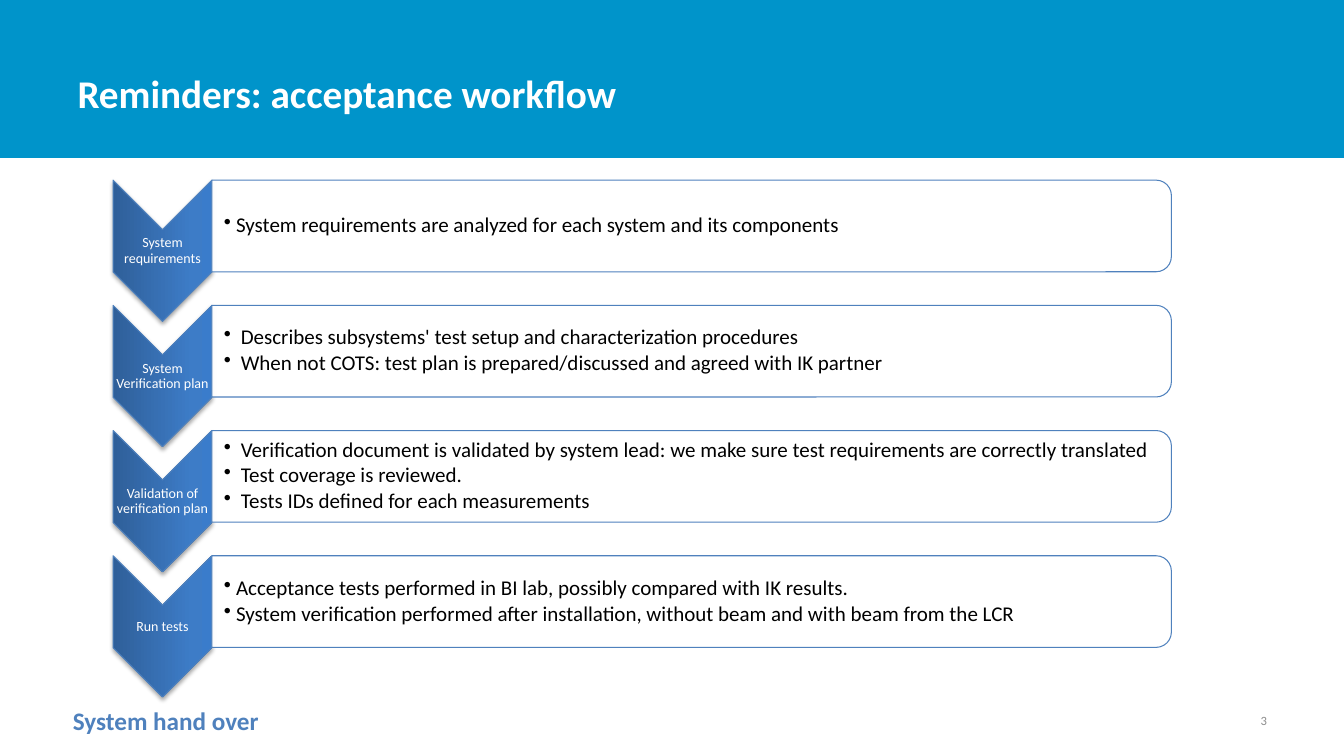
from lxml import etree
from pptx import Presentation
from pptx.dml.color import RGBColor
from pptx.enum.shapes import MSO_SHAPE as SHAPE
from pptx.enum.text import MSO_ANCHOR as ANCHOR, PP_ALIGN as ALIGN
from pptx.oxml import parse_xml
from pptx.oxml.ns import qn
from pptx.util import Cm, Pt

NS = 'xmlns:a="http://schemas.openxmlformats.org/drawingml/2006/main"'
BLUE = "4F81BD"
GRADIENT = f'''<a:gradFill {NS} rotWithShape="1"><a:gsLst>
<a:gs pos="0"><a:srgbClr val="2F5F99"/></a:gs>
<a:gs pos="80000"><a:srgbClr val="3D7CC7"/></a:gs>
<a:gs pos="100000"><a:srgbClr val="3A7CCB"/></a:gs>
</a:gsLst><a:lin ang="16200000" scaled="0"/></a:gradFill>'''
SHADOW = f'''<a:effectLst {NS}>
<a:outerShdw blurRad="40000" dist="23000" dir="5400000" rotWithShape="0">
<a:srgbClr val="000000"><a:alpha val="35000"/></a:srgbClr>
</a:outerShdw></a:effectLst>'''


def add_block(kind, x, y, w, h, fill, line=None, turned=False):
    """Add a shape; a turned one is rotated 90° and still fills the box x, y, w, h."""
    if turned:
        x, y, w, h = x + (w - h) / 2, y + (h - w) / 2, h, w
    sp = s.shapes.add_shape(kind, Cm(x), Cm(y), Cm(w), Cm(h))
    sp.rotation = 90 if turned else 0
    sp.shadow.inherit = False
    sp.fill.solid()
    sp.fill.fore_color.rgb = RGBColor.from_string(fill)
    if line:
        sp.line.color.rgb = RGBColor.from_string(line)
        sp.line.width = Pt(0.75)
    else:
        sp.line.fill.background()
    return sp


def write(sp, lines, size, color, align=ALIGN.LEFT, bold=False, inset=None,
          hang=0, **spacing):
    """Write paragraphs into a shape, bulleted when hang is given."""
    tf = sp.text_frame
    tf.word_wrap = True
    tf.vertical_anchor = ANCHOR.MIDDLE
    if inset:
        tf.margin_left, tf.margin_top, tf.margin_right, tf.margin_bottom = map(Cm, inset)
    for i, line in enumerate(lines):
        p = tf.paragraphs[0] if i == 0 else tf.add_paragraph()
        p.alignment = align
        for name, value in spacing.items():
            setattr(p, name, value)
        if hang:
            pPr = p._p.get_or_add_pPr()
            pPr.set("marL", str(Cm(hang)))
            pPr.set("indent", str(-Cm(hang)))
            etree.SubElement(pPr, qn("a:buChar"), char="•")
        r = p.add_run()
        r.text = line
        font = {"name": "Calibri", "size": Pt(size), "bold": bold}
        for name, value in font.items():
            setattr(r.font, name, value)
        r.font.color.rgb = RGBColor.from_string(color)


prs = Presentation()
prs.slide_width, prs.slide_height = Cm(33.87), Cm(19.05)
s = prs.slides.add_slide(prs.slide_layouts[5])

# Header band and title
title = s.shapes.title
band = add_block(SHAPE.RECTANGLE, 0, 0, 33.87, 3.98, "0094CA")
title._element.addprevious(band._element)
title.left, title.top, title.width, title.height = Cm(1.7), Cm(0.76), Cm(26.44), Cm(3.18)
write(title, ["Reminders: acceptance workflow"], 28, "FFFFFF", bold=True)

# Workflow steps: label, bullet hang, bullets
steps = [
    ("System requirements", 0.31,
     ["System requirements are analyzed for each system and its components"]),
    ("System Verification plan", 0.43,
     ["Describes subsystems' test setup and characterization procedures",
      "When not COTS: test plan is prepared/discussed and agreed with IK partner"]),
    ("Validation of verification plan", 0.43,
     ["Verification document is validated by system lead: we make sure test "
      "requirements are correctly translated",
      "Test coverage is reviewed.",
      "Tests IDs defined for each measurements"]),
    ("Run tests", 0.31,
     ["Acceptance tests performed in BI lab, possibly compared with IK results.",
      "System verification performed after installation, without beam and with "
      "beam from the LCR"]),
]
top, pitch = 4.54, 3.155
for i, (label, hang, bullets) in enumerate(steps):
    y = top + i * pitch

    # Chevron with its label
    chevron = add_block(SHAPE.CHEVRON, 2.85, y, 2.49, 3.56, BLUE, BLUE, turned=True)
    spPr = chevron._element.spPr
    spPr.replace(spPr.find(qn("a:solidFill")), parse_xml(GRADIENT))
    spPr.replace(spPr.find(qn("a:effectLst")), parse_xml(SHADOW))
    tb = s.shapes.add_textbox(Cm(2.85), Cm(y + 1.25), Cm(2.49), Cm(1.07))
    write(tb, [label], 10, "FFFFFF", ALIGN.CENTER, inset=(0.02,) * 4,
          line_spacing=0.9, space_after=Pt(3.5))

    # Panel with its bullets
    panel = add_block(SHAPE.ROUND_2_SAME_RECTANGLE, 5.34, y, 24.18, 2.31,
                      "FFFFFF", BLUE, turned=True)
    color = panel._element.spPr.find(qn("a:solidFill"))[0]
    etree.SubElement(color, qn("a:alpha"), val="90000")
    tb = s.shapes.add_textbox(Cm(5.34), Cm(y + 0.11), Cm(24.08), Cm(2.08))
    write(tb, bullets, 15, "000000", inset=(0.3, 0.02, 0.02, 0.02), hang=hang,
          line_spacing=0.9, space_after=Pt(2.25))

# Closing line and slide number
tb = s.shapes.add_textbox(Cm(0.94), Cm(17.65), Cm(6.48), Cm(1.02))
write(tb, ["System hand over"], 18, BLUE, ALIGN.CENTER, bold=True)
tb = s.shapes.add_textbox(Cm(24.28), Cm(17.65), Cm(7.9), Cm(1.02))
write(tb, ["3"], 9, "8C8C8C", ALIGN.RIGHT)

prs.save("out.pptx")
